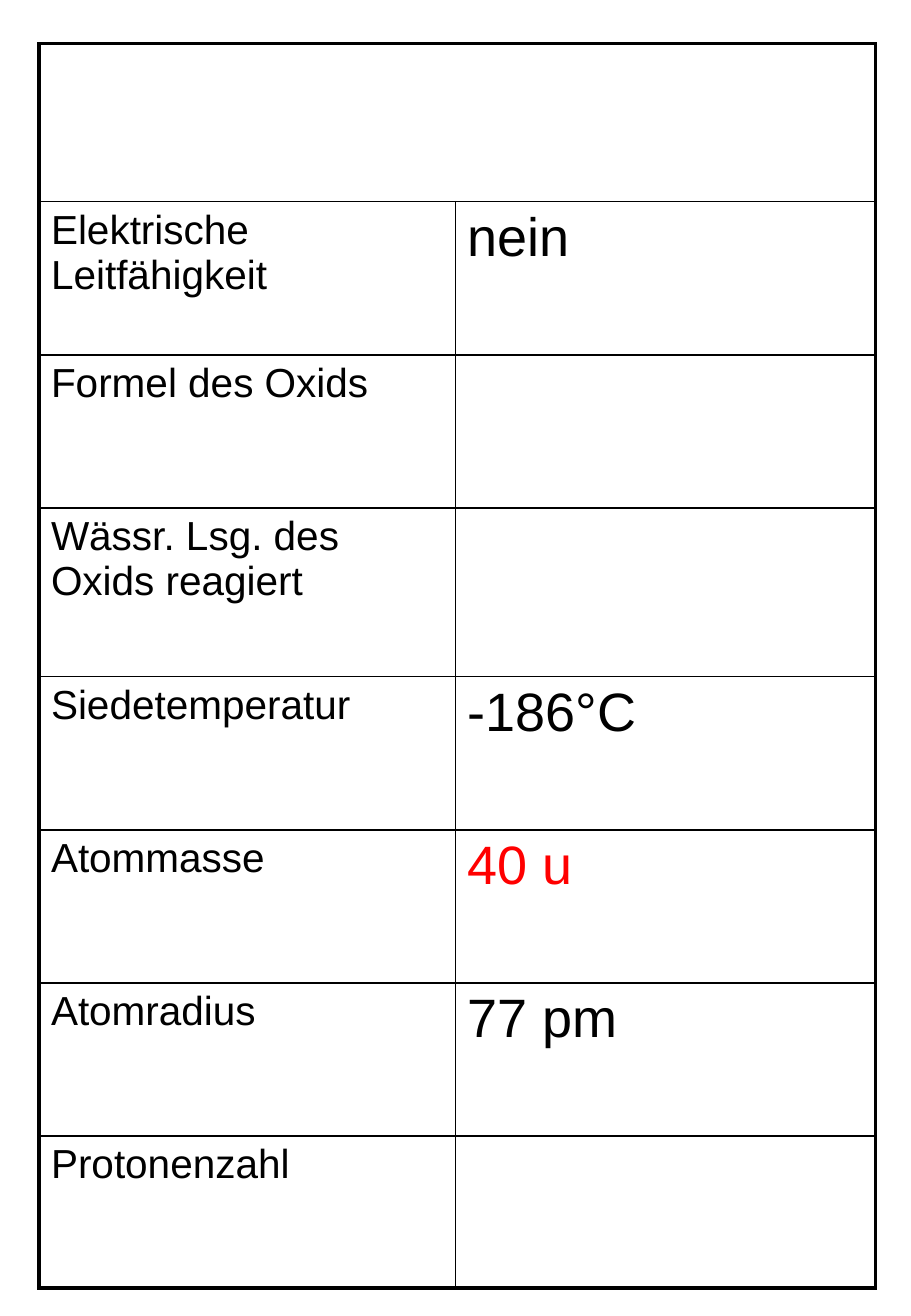
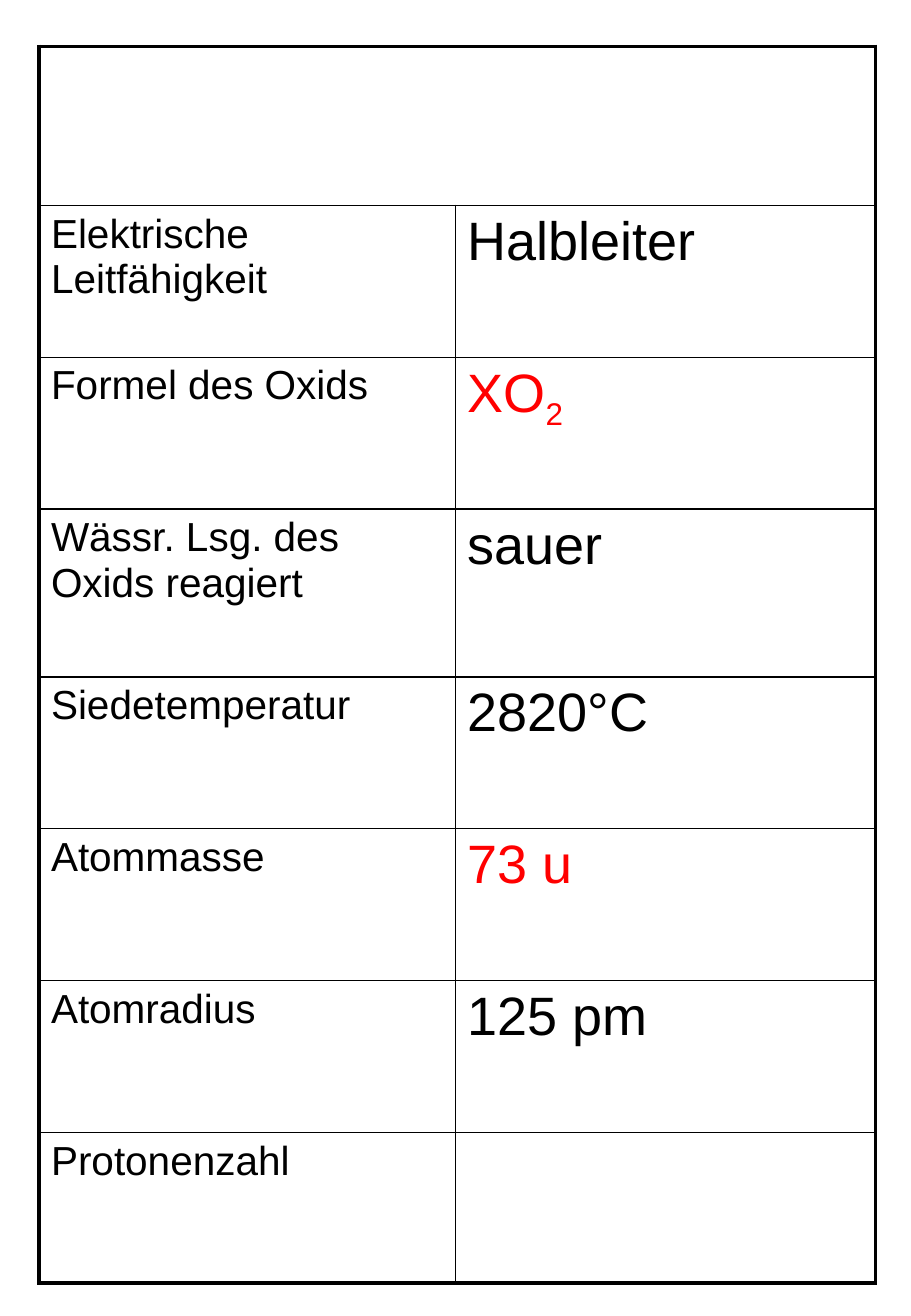
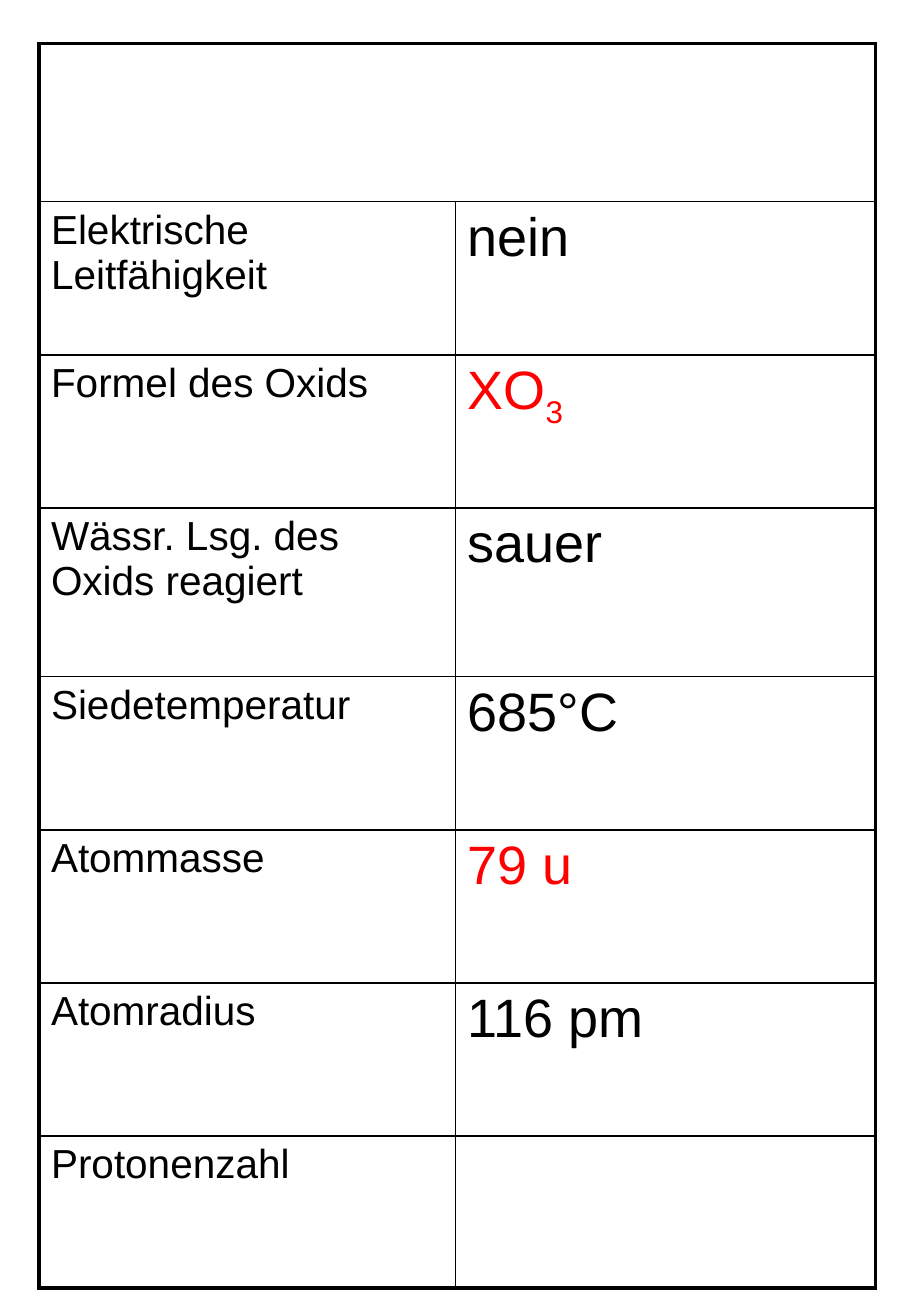
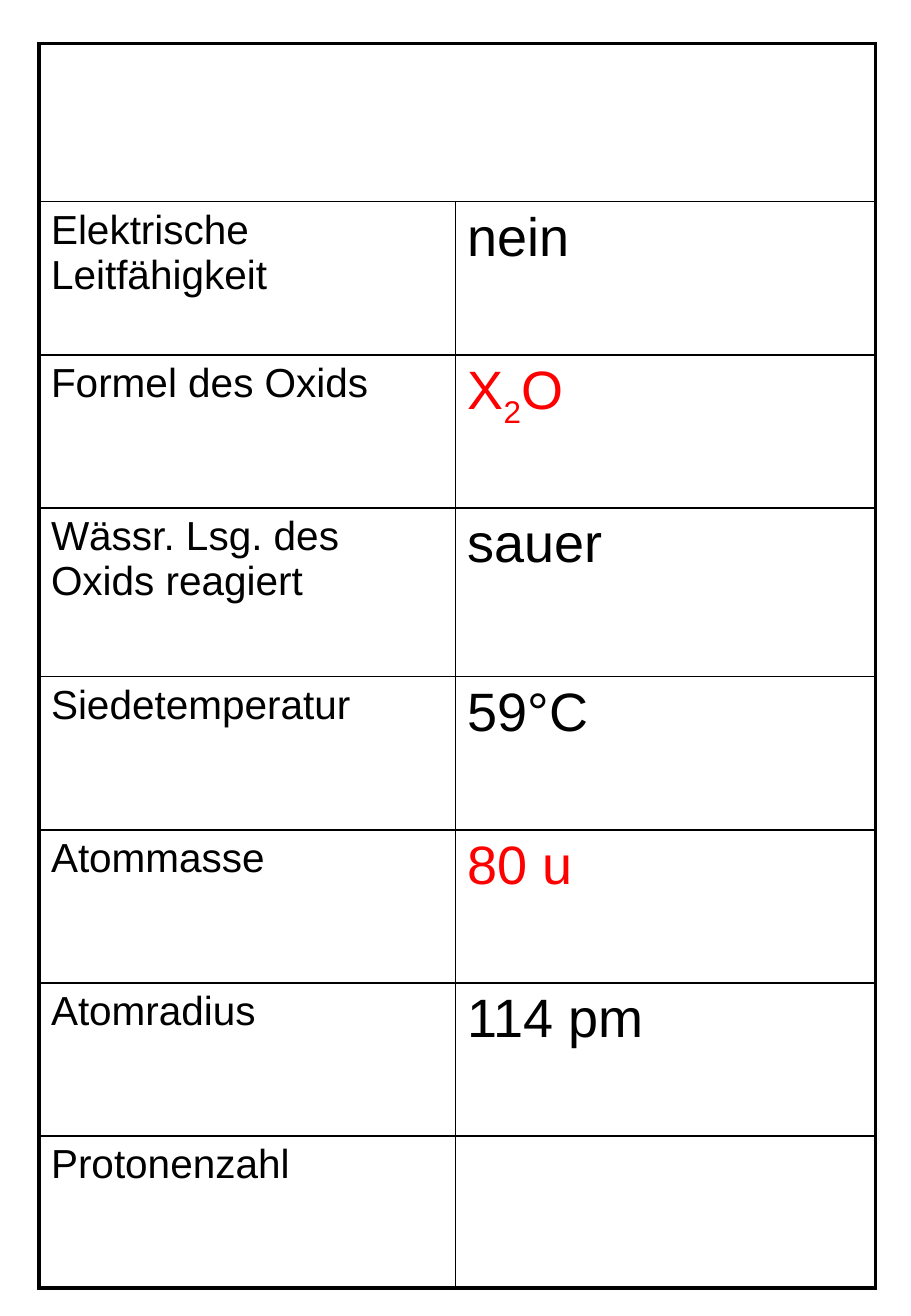
from dataclasses import dataclass
from itertools import groupby

from lxml.etree import SubElement
from pptx import Presentation
from pptx.dml.color import RGBColor
from pptx.oxml.ns import qn
from pptx.util import Inches, Pt


@dataclass(frozen=True)
class Theme:
    font: str = "Arial"
    ink: str = "000000"
    clue: str = "FF0000"
    label_size: int = 24
    value_size: int = 32
    outer_line: float = 2.25
    inner_line: float = 1


@dataclass(frozen=True)
class Layout:
    top: float
    header: float
    row: float
    tall_row: float
    last_row: float

    def heights(self):
        return [self.header, self.row, self.row, self.tall_row,
                self.row, self.row, self.row, self.last_row]


THEME = Theme()
SLIDE_SIZE = (7.5, 10.83)
TABLE_LEFT = 0.32
COLUMN_WIDTHS = (3.43, 3.46)
REGULAR = Layout(0.36, 1.3, 1.26, 1.39, 1.25)
COMPACT = Layout(0.38, 1.31, 1.25, 1.38, 1.24)

FORMULA = "Formel des Oxids"
MASS = "Atommasse"
LABELS = ("Elektrische Leitfähigkeit", FORMULA, "Wässr. Lsg. des Oxids reagiert",
          "Siedetemperatur", MASS, "Atomradius", "Protonenzahl")
CLUE_LABELS = (FORMULA, MASS)

CARDS = (
    (REGULAR, ("nein", "", "", "-186°C", "40 u", "77 pm", "")),
    (COMPACT, ("Halbleiter", "XO2", "sauer", "2820°C", "73 u", "125 pm", "")),
    (REGULAR, ("nein", "XO3", "sauer", "685°C", "79 u", "116 pm", "")),
    (REGULAR, ("nein", "X2O", "sauer", "59°C", "80 u", "114 pm", "")),
)


def add_run(paragraph, text, size, color, subscript=False):
    run = paragraph.add_run()
    run.text = text
    for name, value in {"name": THEME.font, "size": Pt(size)}.items():
        setattr(run.font, name, value)
    run.font.color.rgb = RGBColor.from_string(color)
    if subscript:
        run.font._element.set("baseline", "-25000")


def write_formula(paragraph, formula, size, color):
    for is_digit, characters in groupby(formula, str.isdigit):
        add_run(paragraph, "".join(characters), size, color, is_digit)


def set_borders(cell, widths):
    cell.fill.background()
    properties = cell._tc.get_or_add_tcPr()
    for index, (side, width) in enumerate(widths.items()):
        line = SubElement(properties, qn(f"a:ln{side}"), w=str(Pt(width)))
        fill = SubElement(line, qn("a:solidFill"))
        SubElement(fill, qn("a:srgbClr"), val=THEME.ink)
        properties.insert(index, line)


def format_grid(table):
    last_row, last_column = len(table.rows) - 1, len(table.columns) - 1
    for row in range(last_row + 1):
        for column in range(last_column + 1):
            on_edge = {"L": column == 0, "R": column == last_column,
                       "T": row == 0, "B": row == last_row}
            if row == 0:
                on_edge.update(L=True, R=True)
            set_borders(table.cell(row, column),
                        {side: THEME.outer_line if edge else THEME.inner_line
                         for side, edge in on_edge.items()})


def add_table(slide, layout):
    heights = layout.heights()
    table = slide.shapes.add_table(
        len(heights), len(COLUMN_WIDTHS), Inches(TABLE_LEFT), Inches(layout.top),
        Inches(sum(COLUMN_WIDTHS)), Inches(sum(heights))).table
    for name, value in {"first_row": False, "horz_banding": False}.items():
        setattr(table, name, value)
    for column, width in zip(table.columns, COLUMN_WIDTHS):
        column.width = Inches(width)
    for row, height in zip(table.rows, heights):
        row.height = Inches(height)
    format_grid(table)
    table.cell(0, 0).merge(table.cell(0, 1))
    return table


def add_card(presentation, layout, values):
    slide = presentation.slides.add_slide(presentation.slide_layouts[6])
    table = add_table(slide, layout)
    for row, (label, value) in enumerate(zip(LABELS, values), start=1):
        label_paragraph, value_paragraph = (
            table.cell(row, column).text_frame.paragraphs[0] for column in range(2))
        add_run(label_paragraph, label, THEME.label_size, THEME.ink)
        color = THEME.clue if label in CLUE_LABELS else THEME.ink
        if label == FORMULA:
            write_formula(value_paragraph, value, THEME.value_size, color)
        elif value:
            add_run(value_paragraph, value, THEME.value_size, color)


def main():
    presentation = Presentation()
    presentation.slide_width, presentation.slide_height = map(Inches, SLIDE_SIZE)
    for layout, values in CARDS:
        add_card(presentation, layout, values)
    presentation.save("out.pptx")


if __name__ == "__main__":
    main()
